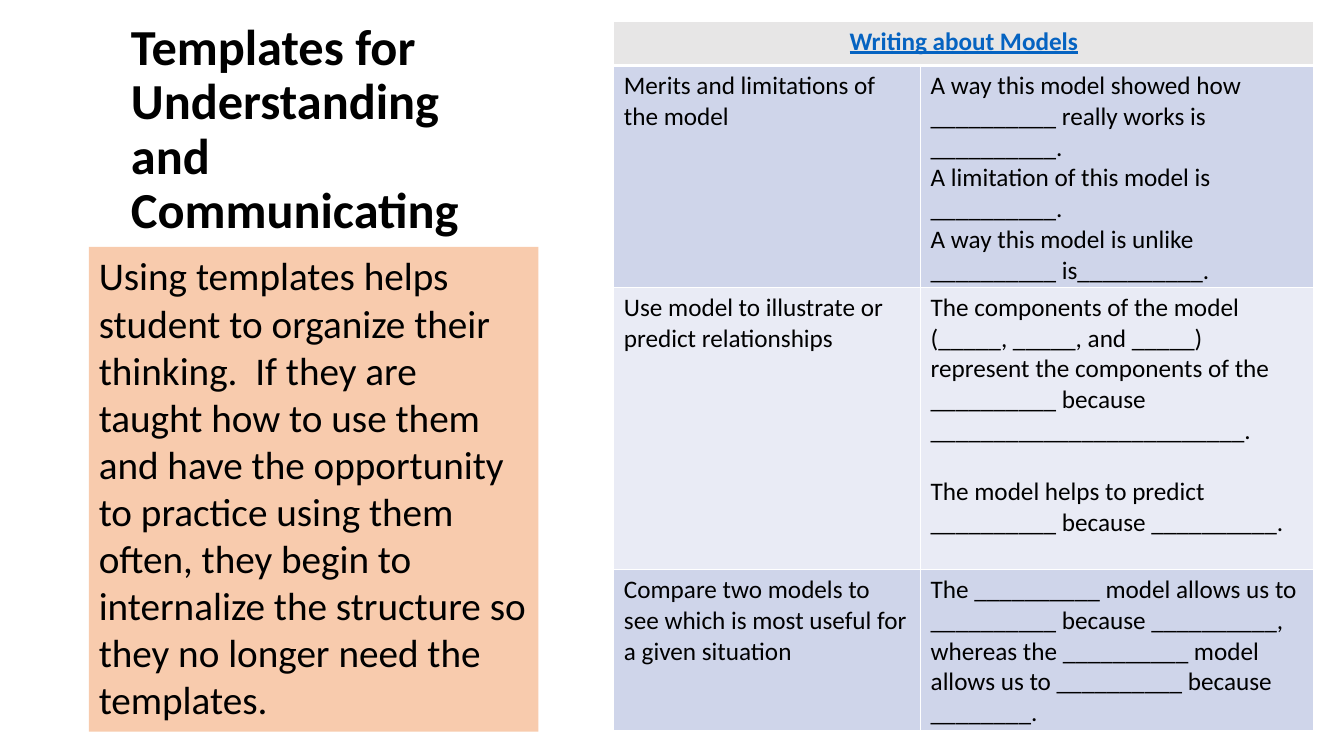
"""Builds a slide on writing templates for understanding and communicating about models."""
from lxml import etree
from pptx import Presentation
from pptx.dml.color import RGBColor
from pptx.enum.shapes import MSO_SHAPE
from pptx.enum.text import MSO_ANCHOR, PP_ALIGN
from pptx.oxml.ns import qn
from pptx.util import Cm, Pt

RECTANGLE = MSO_SHAPE.RECTANGLE
TOP, MIDDLE = MSO_ANCHOR.TOP, MSO_ANCHOR.MIDDLE
LEFT, CENTER = PP_ALIGN.LEFT, PP_ALIGN.CENTER

BLACK = RGBColor(0x00, 0x00, 0x00)
WHITE = RGBColor(0xFF, 0xFF, 0xFF)
PEACH = RGBColor(0xF8, 0xCB, 0xAD)
LINK_BLUE = RGBColor(0x05, 0x63, 0xC1)
HEADER_GREY = RGBColor(0xE7, 0xE6, 0xE6)
BANDS = RGBColor(0xCF, 0xD5, 0xEA), RGBColor(0xE9, 0xEB, 0xF5)

HEADING = "Writing about Models"
TEMPLATES = [
    (["Merits and limitations of the model"],
     ["A way this model showed how __________ really works is __________.",
      "A limitation of this model is __________.",
      "A way this model is unlike __________ is__________."], 0),
    (["Use model to illustrate or predict relationships"],
     ["The components of the model (_____, _____, and _____) represent the components "
      "of the __________ because _________________________.",
      "The model helps to predict __________ because __________."], 22),
    (["Compare two models to see which is most useful for a given situation"],
     ["The __________ model allows us to __________ because __________, whereas the "
      "__________ model allows us to __________ because ________."], 0),
]
COLUMN_WIDTHS = 7.73, 9.91
ROW_HEIGHTS = 1.12, 5.59, 7.11, 4.06


def write(frame, paragraphs, size=18, color=BLACK, bold=False, underline=False,
          align=LEFT, line_spacing=1.0, gap=0):
    """Fill a text frame with formatted paragraphs."""
    frame.word_wrap = True
    for index, text in enumerate(paragraphs):
        paragraph = frame.add_paragraph() if index else frame.paragraphs[0]
        paragraph.alignment = align
        paragraph.line_spacing = line_spacing
        if index and gap:
            paragraph.space_before = Pt(gap)
        run = paragraph.add_run()
        run.text = text
        font = run.font
        font.name, font.size, font.bold, font.underline = "Calibri", Pt(size), bold, underline
        font.color.rgb = color


class TemplateSlide:
    """Holds the current slide and adds styled elements to it."""

    def __init__(self, slide, rule_color=WHITE):
        self.shapes = slide.shapes
        self.rule_color = rule_color

    def title(self, text, box):
        title = self.shapes.add_textbox(*map(Cm, box))
        title.text_frame.vertical_anchor = MIDDLE
        write(title.text_frame, [text], size=36, bold=True, line_spacing=0.9)

    def panel(self, text, box):
        panel = self.shapes.add_shape(RECTANGLE, *map(Cm, box))
        panel.shadow.inherit = False
        panel.fill.solid()
        panel.fill.fore_color.rgb = PEACH
        panel.line.fill.background()
        panel.text_frame.vertical_anchor = TOP
        write(panel.text_frame, [text], size=28)

    def style_cell(self, cell, fill, top=1, bottom=1):
        properties = cell._tc.get_or_add_tcPr()
        for side, width in (("L", 1), ("R", 1), ("T", top), ("B", bottom)):
            border = etree.SubElement(properties, qn(f"a:ln{side}"), w=str(Pt(width)))
            solid = etree.SubElement(border, qn("a:solidFill"))
            etree.SubElement(solid, qn("a:srgbClr"), val=str(self.rule_color))
        cell.fill.solid()
        cell.fill.fore_color.rgb = fill

    def table(self, left, top):
        table = self.shapes.add_table(
            len(ROW_HEIGHTS), len(COLUMN_WIDTHS), Cm(left), Cm(top),
            Cm(sum(COLUMN_WIDTHS)), Cm(sum(ROW_HEIGHTS))).table
        for column, width in zip(table.columns, COLUMN_WIDTHS):
            column.width = Cm(width)
        for row, height in zip(table.rows, ROW_HEIGHTS):
            row.height = Cm(height)

        header = table.cell(0, 0)
        header.merge(table.cell(0, 1))
        for cell in table.rows[0].cells:
            self.style_cell(cell, HEADER_GREY, bottom=3)
        write(header.text_frame, [HEADING], color=LINK_BLUE, bold=True,
              underline=True, align=CENTER)

        for index, (purpose, starters, gap) in enumerate(TEMPLATES):
            for column, paragraphs in enumerate((purpose, starters)):
                cell = table.cell(index + 1, column)
                self.style_cell(cell, BANDS[index % 2], top=1 if index else 3)
                write(cell.text_frame, paragraphs, gap=gap)


def main():
    """Build and save the slide."""
    deck = Presentation()
    deck.slide_width, deck.slide_height = Cm(33.87), Cm(19.05)
    page = TemplateSlide(deck.slides.add_slide(deck.slide_layouts[6]))
    page.title("Templates for Understanding and Communicating", (3.05, 0.94, 10.19, 4.7))
    page.panel("Using templates helps student to organize their thinking.  If they are taught "
               "how to use them and have the opportunity to practice using them often, they "
               "begin to internalize the structure so they no longer need the templates.",
               (2.24, 6.22, 11.33, 12.22))
    page.table(15.47, 0.53)
    deck.save("out.pptx")


if __name__ == "__main__":
    main()
